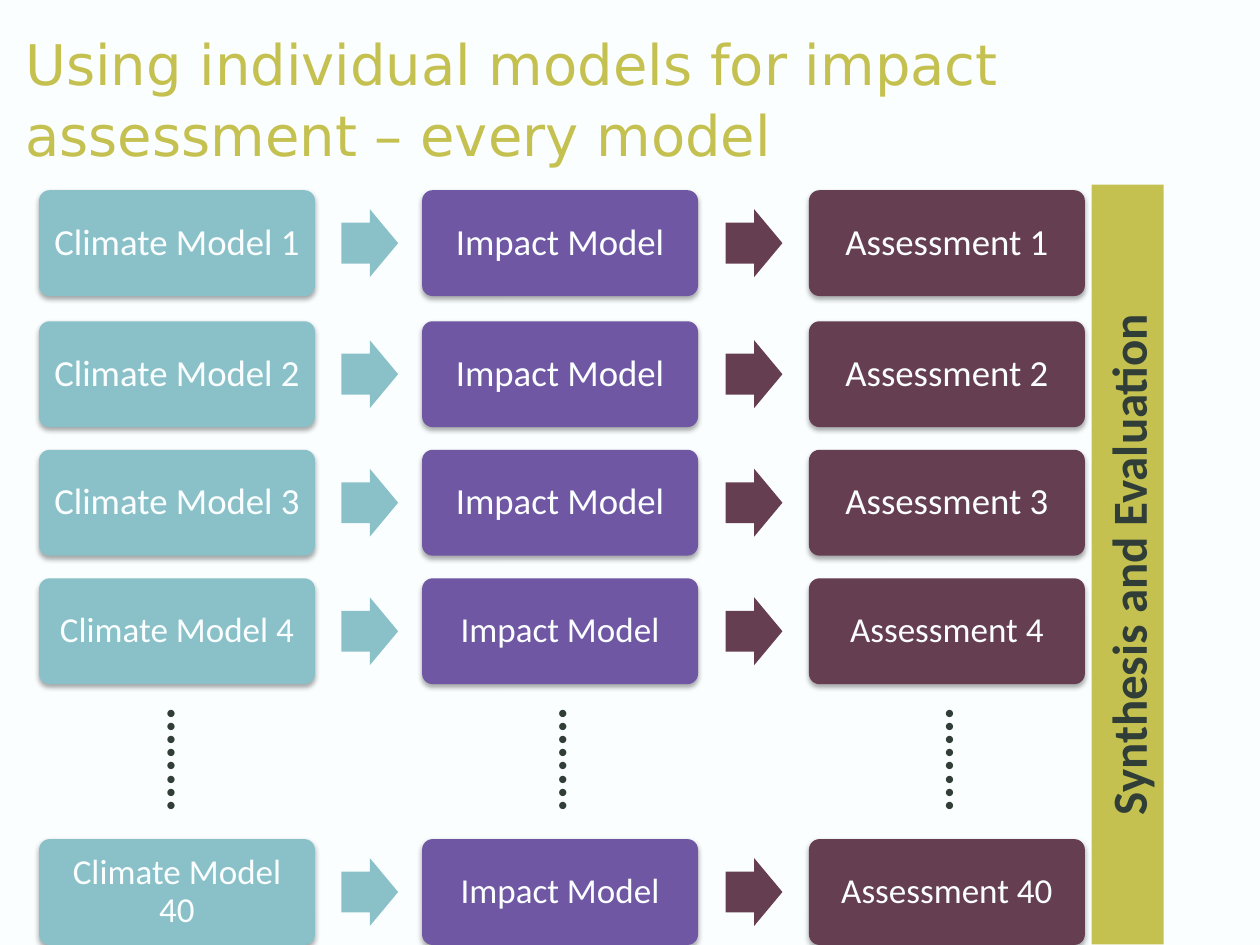
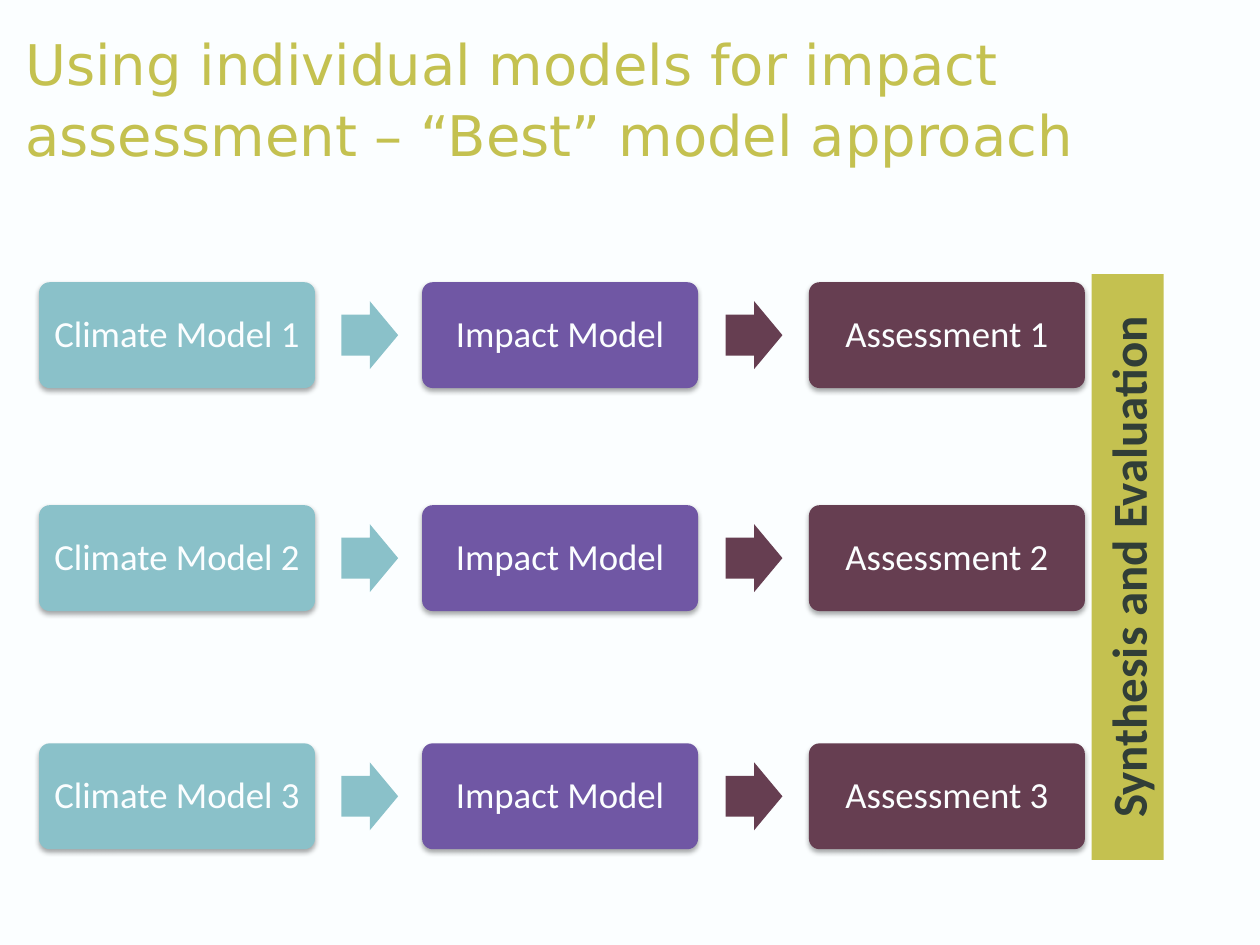
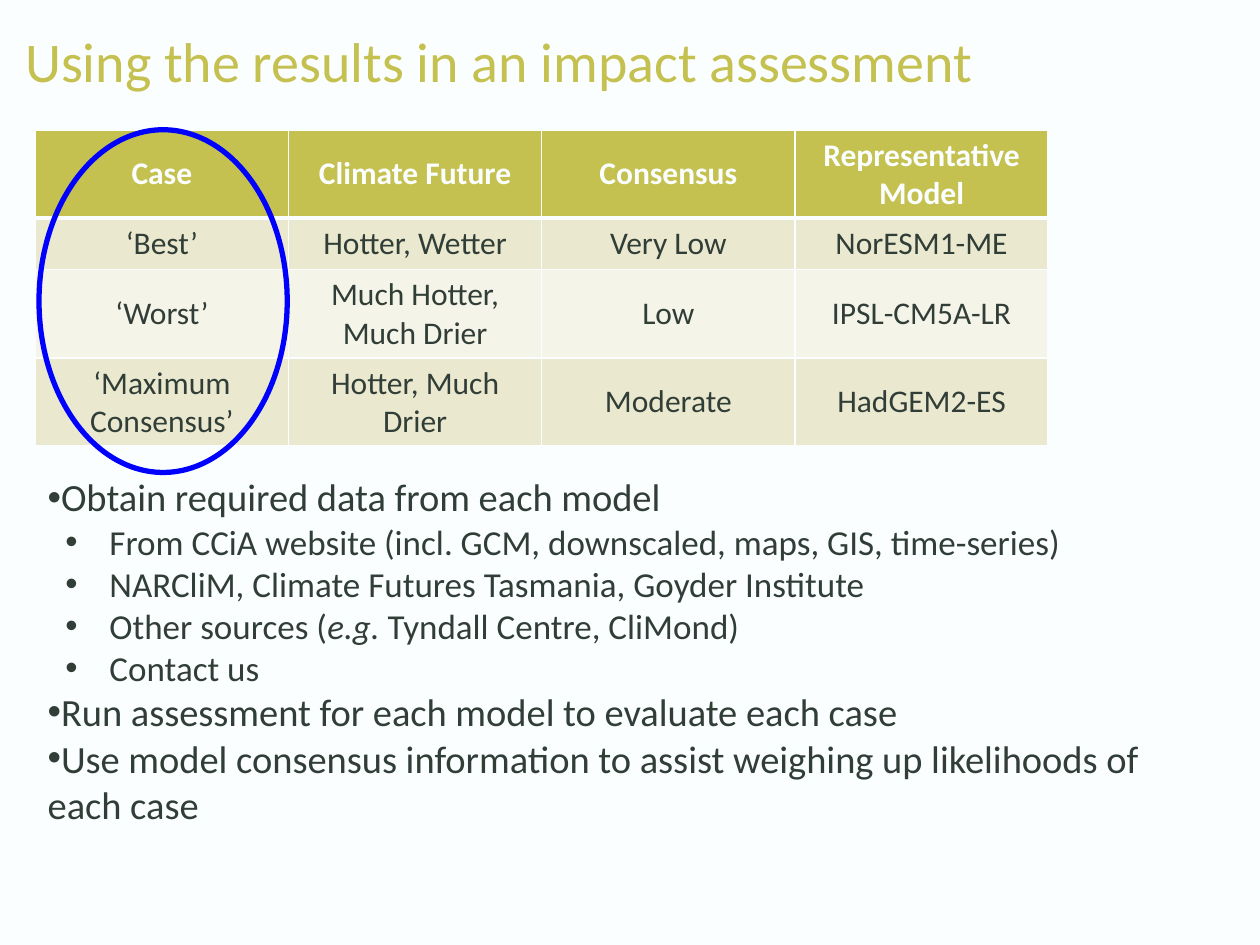
from lxml import etree
from pptx import Presentation
from pptx.dml.color import RGBColor
from pptx.enum.shapes import MSO_SHAPE as SHAPE
from pptx.enum.text import MSO_ANCHOR as ANCHOR, PP_ALIGN as ALIGN
from pptx.oxml import parse_xml
from pptx.oxml.ns import nsdecls, qn
from pptx.util import Inches, Pt

# Shared style
PAPER, INK, OLIVE = "FBFEFF", "313E37", "C4C150"
TEAL, PURPLE, PLUM, BLUE = "8AC1C9", "7057A4", "663E51", "0000FF"
BANDS = ("EAE9D0", "F5F4E9")
FONT, WIDE_FONT = "Calibri", "DejaVu Sans"

# Columns of the model chain
BOX_W, BOX_H = 2.19, 0.84
BOX_COLUMNS = ((0.31, TEAL), (3.35, PURPLE), (6.42, PLUM))
ARROW_COLUMNS = ((2.71, TEAL), (5.76, PLUM))
ARROW_W, ARROW_H = 0.45, 0.54


def rgb(value):
    return RGBColor.from_string(value)


class Deck:
    def __init__(self):
        self.prs = Presentation()
        self.prs.slide_width, self.prs.slide_height = Inches(10), Inches(7.5)
        self.slide = None

    def new_slide(self, title, font=FONT, line_spacing=1.0):
        self.slide = self.prs.slides.add_slide(self.prs.slide_layouts[6])
        fill = self.slide.background.fill
        fill.solid()
        fill.fore_color.rgb = rgb(PAPER)
        tf = self.text_box(0.2, 0.21, 9.8, 1.1, inset=0)
        p = tf.paragraphs[0]
        p.line_spacing = line_spacing
        self.run(p, title, 32, OLIVE, font=font)

    def run(self, p, text, size, color, bold=False, italic=False, font=FONT):
        r = p.add_run()
        r.text = text
        r.font.name, r.font.size = font, Pt(size)
        r.font.bold, r.font.italic = bold, italic
        r.font.color.rgb = rgb(color)

    def frame(self, sp, inset=None, anchor=ANCHOR.TOP):
        tf = sp.text_frame
        tf.word_wrap = True
        tf.vertical_anchor = anchor
        if inset is not None:
            tf.margin_left = tf.margin_right = Inches(inset)
            tf.margin_top = tf.margin_bottom = Inches(inset)
        return tf

    def text_box(self, x, y, w, h, inset=None):
        sp = self.slide.shapes.add_textbox(Inches(x), Inches(y), Inches(w), Inches(h))
        return self.frame(sp, inset)

    def shape(self, kind, x, y, w, h, fill=None, line=None, group=None):
        shapes = (group or self.slide).shapes
        sp = shapes.add_shape(kind, Inches(x), Inches(y), Inches(w), Inches(h))
        sp.shadow.inherit = False
        if fill:
            sp.fill.solid()
            sp.fill.fore_color.rgb = rgb(fill)
        else:
            sp.fill.background()
        if line:
            sp.line.color.rgb = rgb(line)
            sp.line.width = Pt(3)
        else:
            sp.line.fill.background()
        return sp

    def soft_shadow(self, sp):
        effects = sp._element.spPr.find(qn("a:effectLst"))
        effects.append(parse_xml(
            f'<a:outerShdw {nsdecls("a")} blurRad="{Pt(3.1)}" dist="{Pt(1.8)}" dir="5400000" '
            'rotWithShape="0"><a:srgbClr val="000000"><a:alpha val="35000"/></a:srgbClr></a:outerShdw>'))

    def chain(self, y, number, size=21):
        """One row: climate model, impact model, assessment."""
        group = self.slide.shapes.add_group_shape()
        labels = (f"Climate Model {number}", "Impact Model", f"Assessment {number}")
        for (x, color), label in zip(BOX_COLUMNS, labels):
            sp = self.shape(SHAPE.ROUNDED_RECTANGLE, x, y, BOX_W, BOX_H, color, group=group)
            sp.adjustments[0] = 0.1
            self.soft_shadow(sp)
            p = self.frame(sp, 0.09 if size > 20 else 0.08, ANCHOR.MIDDLE).paragraphs[0]
            p.alignment, p.line_spacing = ALIGN.CENTER, 0.9
            self.run(p, label, size, PAPER)
        for x, color in ARROW_COLUMNS:
            sp = self.shape(SHAPE.RIGHT_ARROW, x, y + (BOX_H - ARROW_H) / 2,
                            ARROW_W, ARROW_H, color, group=group)
            sp.adjustments[0], sp.adjustments[1] = 0.6, 0.5

    def upright(self, text, center_x, center_y, length, fill=None):
        """A strip whose text reads upwards."""
        thick = 0.57
        sp = self.shape(SHAPE.RECTANGLE, center_x - length / 2, center_y - thick / 2,
                        length, thick, fill)
        sp.rotation = 270
        p = self.frame(sp).paragraphs[0]
        p.alignment = ALIGN.CENTER
        self.run(p, text, 28, INK, bold=True)

    def table(self, x, y, col_w, row_heights, rows):
        tbl = self.slide.shapes.add_table(
            len(rows), len(rows[0]), Inches(x), Inches(y),
            Inches(col_w * len(rows[0])), Inches(sum(row_heights))).table
        for col in tbl.columns:
            col.width = Inches(col_w)
        for i, (row, height) in enumerate(zip(rows, row_heights)):
            tbl.rows[i].height = Inches(height)
            for j, text in enumerate(row):
                self.cell(tbl.cell(i, j), text, i)

    def cell(self, cell, text, row):
        header = row == 0
        widths = {"L": 1, "R": 1, "T": 3 if row == 1 else 1, "B": 3 if header else 1}
        tc_pr = cell._tc.get_or_add_tcPr()
        for side, width in widths.items():
            ln = etree.SubElement(tc_pr, qn(f"a:ln{side}"), w=str(Pt(width)))
            fill = etree.SubElement(ln, qn("a:solidFill"))
            etree.SubElement(fill, qn("a:srgbClr"), val=PAPER)
        cell.fill.solid()
        cell.fill.fore_color.rgb = rgb(OLIVE if header else BANDS[(row - 1) % 2])
        cell.vertical_anchor = ANCHOR.MIDDLE
        p = cell.text_frame.paragraphs[0]
        p.alignment = ALIGN.CENTER
        self.run(p, text, 18, PAPER if header else INK, bold=header)

    def bullets(self, x, y, w, h, items):
        """Items are (level, runs); every second run is italic."""
        tf = self.text_box(x, y, w, h)
        for i, (level, runs) in enumerate(items):
            p = tf.add_paragraph() if i else tf.paragraphs[0]
            margin, indent, size = ((0, 0, 22), (0.49, -0.35, 20))[level]
            p.level = level
            p.line_spacing = 1.0 if i else 0.9
            p_pr = p._p.get_or_add_pPr()
            p_pr.set("marL", str(Inches(margin)))
            p_pr.set("indent", str(Inches(indent)))
            etree.SubElement(p_pr, qn("a:buFont"), typeface="Arial")
            etree.SubElement(p_pr, qn("a:buChar"), char="•")
            for k, text in enumerate(runs):
                self.run(p, text, size, INK, italic=k % 2 == 1)


def main():
    deck = Deck()

    # Every model
    deck.new_slide("Using individual models for impact assessment – every model", WIDE_FONT, 1.05)
    for y, number, size in ((1.51, 1, 21), (2.55, 2, 21), (3.57, 3, 21), (4.59, 4, 20), (6.66, 40, 20)):
        deck.chain(y, number, size)
    deck.upright("Synthesis and Evaluation", 8.95, 4.48, 6.03, OLIVE)
    for x in (1.23, 4.34, 7.41):
        deck.upright("........", x, 6.03, 1.18)

    # Best model
    deck.new_slide("Using individual models for impact assessment – “Best” model approach", WIDE_FONT, 1.05)
    for number, y in enumerate((2.24, 4.01, 5.9), 1):
        deck.chain(y, number)
    deck.upright("Synthesis and Evaluation", 8.95, 4.5, 4.65, OLIVE)

    # Using the results
    deck.new_slide("Using the results in an impact assessment")
    deck.bullets(0.28, 3.75, 9.45, 2.91, (
        (0, ["Obtain required data from each model"]),
        (1, ["From CCiA website (incl. GCM, downscaled, maps, GIS, time-series)"]),
        (1, ["NARCliM, Climate Futures Tasmania, Goyder Institute"]),
        (1, ["Other sources (", "e.g.", " Tyndall Centre, CliMond)"]),
        (1, ["Contact us"]),
        (0, ["Run assessment for each model to evaluate each case"]),
        (0, ["Use model consensus information to assist weighing up likelihoods of each case"]),
    ))
    deck.table(0.28, 1.03, 2.01, (0.7, 0.41, 0.7, 0.7), (
        ("Case", "Climate Future", "Consensus", "Representative Model"),
        ("‘Best’", "Hotter, Wetter", "Very Low", "NorESM1-ME"),
        ("‘Worst’", "Much Hotter, Much Drier", "Low", "IPSL-CM5A-LR"),
        ("‘Maximum Consensus’", "Hotter, Much Drier", "Moderate", "HadGEM2-ES"),
    ))
    deck.shape(SHAPE.OVAL, 0.31, 1.03, 1.97, 2.72, line=BLUE)

    deck.prs.save("out.pptx")


if __name__ == "__main__":
    main()
